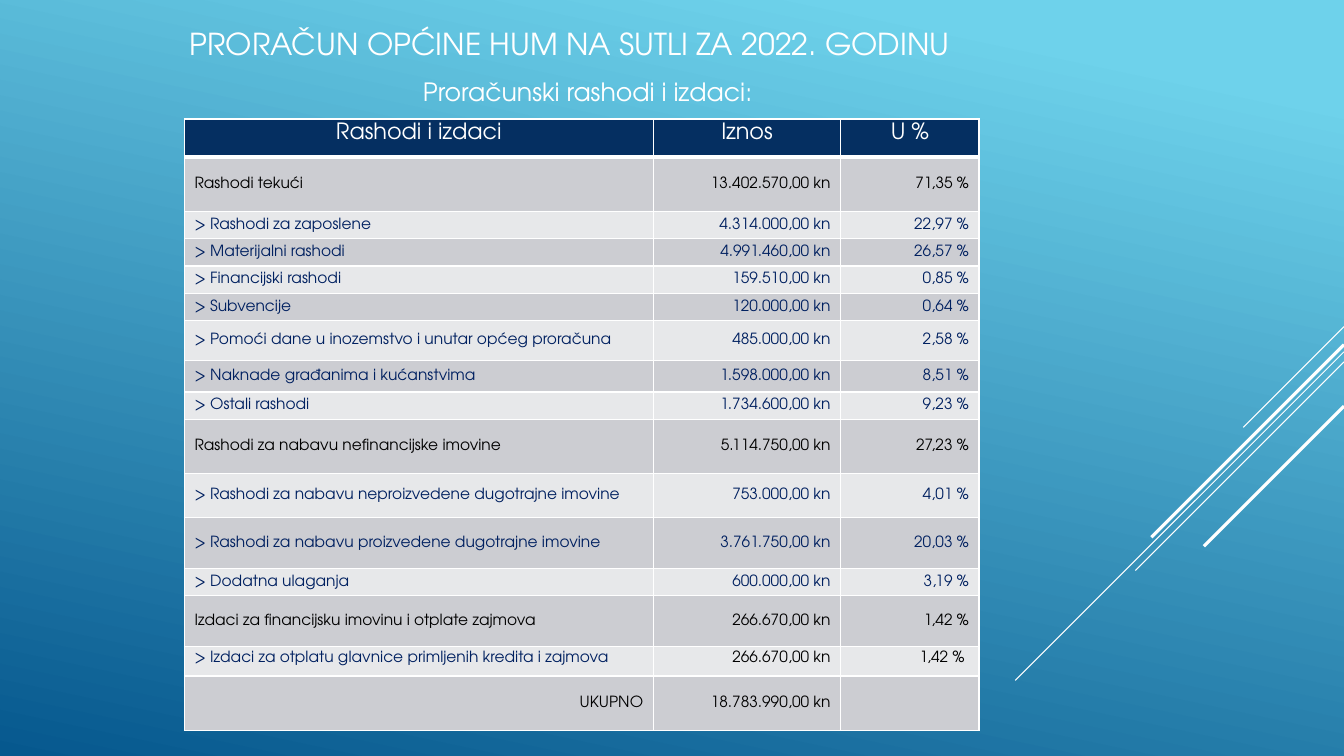
from lxml import etree
from pptx import Presentation
from pptx.dml.color import RGBColor
from pptx.enum.shapes import MSO_CONNECTOR
from pptx.enum.text import MSO_ANCHOR, PP_ALIGN
from pptx.oxml.ns import qn
from pptx.util import Pt

PX = 9144
SLIDE_W, SLIDE_H = 1333, 750
FONT = "TeX Gyre Adventor"
WHITE = RGBColor(0xFF, 0xFF, 0xFF)
BLACK = RGBColor(0x00, 0x00, 0x00)
NAVY = RGBColor(0x00, 0x20, 0x60)
HEADER_BLUE = RGBColor(0x05, 0x2F, 0x61)
BAND_DARK = RGBColor(0xCC, 0xCD, 0xD2)
BAND_LIGHT = RGBColor(0xE7, 0xE8, 0xEA)
SKY = RGBColor(0x6E, 0xD2, 0xEB)
OCEAN = RGBColor(0x06, 0x58, 0x8E)
STRAIGHT = MSO_CONNECTOR.STRAIGHT
LEFT, CENTER, RIGHT = PP_ALIGN.LEFT, PP_ALIGN.CENTER, PP_ALIGN.RIGHT
TOP, MIDDLE, BOTTOM = MSO_ANCHOR.TOP, MSO_ANCHOR.MIDDLE, MSO_ANCHOR.BOTTOM

COLUMN_WIDTHS = (465, 186, 137)
HEADER_HEIGHT = 38
TOP_MARGIN = 4
HEADERS = ("Rashodi i izdaci", "Iznos", "U %")
LOAN_REPAYMENT = "> Izdaci za otplatu glavnice primljenih kredita i zajmova"
EXPENSES = (
    (54, "Rashodi tekući", "13.402.570,00 kn", "71,35 %"),
    (27, "> Rashodi za zaposlene", "4.314.000,00 kn", "22,97 %"),
    (27, "> Materijalni rashodi", "4.991.460,00 kn", "26,57 %"),
    (27, "> Financijski rashodi", "159.510,00 kn", "0,85 %"),
    (27, "> Subvencije", "120.000,00 kn", "0,64 %"),
    (40, "> Pomoći dane u inozemstvo i unutar općeg proračuna",
     "485.000,00 kn", "2,58 %"),
    (31, "> Naknade građanima i kućanstvima", "1.598.000,00 kn", "8,51 %"),
    (27, "> Ostali rashodi", "1.734.600,00 kn", "9,23 %"),
    (54, "Rashodi za nabavu nefinancijske imovine",
     "5.114.750,00 kn", "27,23 %"),
    (44, "> Rashodi za nabavu neproizvedene dugotrajne imovine",
     "753.000,00 kn", "4,01 %"),
    (50, "> Rashodi za nabavu proizvedene dugotrajne imovine",
     "3.761.750,00 kn", "20,03 %"),
    (27, "> Dodatna ulaganja", "600.000,00 kn", "3,19 %"),
    (51, "Izdaci za financijsku imovinu i otplate zajmova",
     "266.670,00 kn", "1,42 %"),
    (29, LOAN_REPAYMENT, "266.670,00 kn", "1,42 % "),
    (54, "UKUPNO", "18.783.990,00 kn", ""),
)
DIAGONALS = ((324, 100, 0.75), (349, 326, 0.75), (359, 207, 0.75),
             (342, 191, 2.25), (403, 139, 2.25))


def px(*lengths):
    """Turn pixel lengths into EMU."""
    return [length * PX for length in lengths]


def style_paragraph(p, text, size, color, align):
    """Write one paragraph in the slide font."""
    p.text = text
    p.alignment = align
    p.font.name = FONT
    p.font.size = Pt(size)
    p.font.bold = False
    p.font.color.rgb = color


def paint_background(s):
    """Fill the slide with the blue gradient."""
    fill = s.background.fill
    fill.gradient()
    fill.gradient_angle = 258
    for stop, color, position in zip(fill.gradient_stops, (SKY, OCEAN), (0.1, 1)):
        stop.color.rgb = color
        stop.position = position


def add_diagonals(s, right):
    """Draw the 45-degree lines running down from the right edge."""
    for y, run, width in DIAGONALS:
        line = s.shapes.add_connector(
            STRAIGHT, *px(right, y, right - run, y + run))
        line.line.color.rgb = WHITE
        line.line.width = Pt(width)
        etree.SubElement(line._element.spPr, qn("a:effectLst"))


def add_heading(s, box, text, size, align, anchor):
    """Place a white heading inside the given box."""
    tf = s.shapes.add_textbox(*px(*box)).text_frame
    tf.word_wrap = True
    tf.vertical_anchor = anchor
    style_paragraph(tf.paragraphs[0], text, size, WHITE, align)


def set_borders(cell, top, bottom):
    """Give a cell white borders, with top and bottom widths in points."""
    tc_pr = cell._tc.get_or_add_tcPr()
    for side, width in (("L", 1), ("R", 1), ("T", top), ("B", bottom)):
        ln = etree.SubElement(tc_pr, qn(f"a:ln{side}"), w=str(Pt(width)))
        fill = etree.SubElement(ln, qn("a:solidFill"))
        etree.SubElement(fill, qn("a:srgbClr"), val=str(WHITE))


def fill_cell(cell, text, size, color, align, anchor, fill, top=1, bottom=1):
    """Set the text, borders and fill of one cell."""
    cell.margin_top = TOP_MARGIN * PX if anchor == TOP else 0
    cell.margin_bottom = 0
    cell.vertical_anchor = anchor
    set_borders(cell, top, bottom)
    cell.fill.solid()
    cell.fill.fore_color.rgb = fill
    style_paragraph(cell.text_frame.paragraphs[0], text, size, color, align)


def add_expense_table(s, left, top):
    """Build the expense table from its top left corner."""
    heights = [HEADER_HEIGHT] + [row[0] for row in EXPENSES]
    table = s.shapes.add_table(
        len(heights), len(HEADERS),
        *px(left, top, sum(COLUMN_WIDTHS), sum(heights))).table
    for column, width in zip(table.columns, px(*COLUMN_WIDTHS)):
        column.width = width
    for row, height in zip(table.rows, px(*heights)):
        row.height = height
    for c, header in enumerate(HEADERS):
        fill_cell(table.cell(0, c), header, 16, WHITE, CENTER, TOP,
                  HEADER_BLUE, bottom=3)
    for r, (_, name, *figures) in enumerate(EXPENSES, start=1):
        band = BAND_DARK if r % 2 else BAND_LIGHT
        name_color = NAVY if name.startswith(">") else BLACK
        figure_color = BLACK if name == LOAN_REPAYMENT else name_color
        name_align = RIGHT if name == "UKUPNO" else LEFT
        anchor = TOP if name == LOAN_REPAYMENT else MIDDLE
        top_width = 3 if r == 1 else 1
        fill_cell(table.cell(r, 0), name, 11, name_color, name_align,
                  anchor, band, top_width)
        for c, figure in enumerate(figures, start=1):
            fill_cell(table.cell(r, c), figure, 11, figure_color, RIGHT,
                      anchor, band, top_width)


def main():
    """Build and save the budget slide."""
    prs = Presentation()
    prs.slide_width, prs.slide_height = px(SLIDE_W, SLIDE_H)
    s = prs.slides.add_slide(prs.slide_layouts[6])
    paint_background(s)
    add_diagonals(s, SLIDE_W)
    add_heading(s, (101, 17, 928, 53),
                "PRORAČUN OPĆINE HUM NA SUTLI ZA 2022. GODINU",
                21.6, CENTER, MIDDLE)
    add_heading(s, (247, 48, 509, 63), "Proračunski rashodi i izdaci:",
                18, RIGHT, BOTTOM)
    add_expense_table(s, 183, 118)
    prs.save("out.pptx")


if __name__ == "__main__":
    main()
